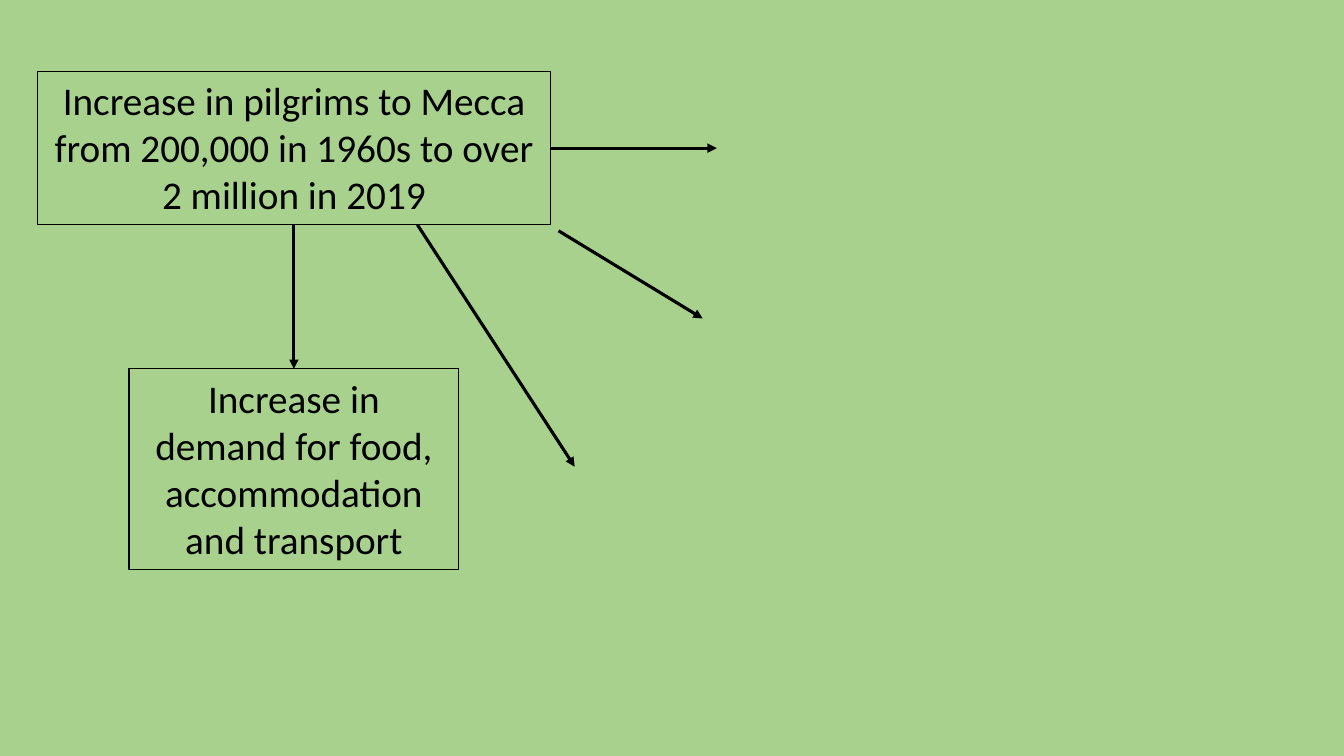
from typing import NamedTuple, Optional

from lxml import etree
from pptx import Presentation
from pptx.dml.color import RGBColor
from pptx.enum.shapes import MSO_CONNECTOR
from pptx.enum.text import MSO_ANCHOR, MSO_AUTO_SIZE, PP_ALIGN
from pptx.oxml.ns import qn
from pptx.shapes.autoshape import Shape
from pptx.slide import Slide
from pptx.util import Inches, Pt

STRAIGHT = MSO_CONNECTOR.STRAIGHT
CENTER = PP_ALIGN.CENTER
BOTTOM_SIDE, RIGHT_SIDE, TOP_SIDE = 2, 3, 0

COLOURS = {"background": "A9D18E", "ink": "000000"}
FRAME_FORMAT = {
    "word_wrap": True,
    "auto_size": MSO_AUTO_SIZE.SHAPE_TO_FIT_TEXT,
    "vertical_anchor": MSO_ANCHOR.TOP,
}
FONT_FORMAT = {"name": "Calibri", "size": Pt(28)}


class Statement(NamedTuple):
    key: str
    left: float
    top: float
    width: float
    height: float
    wording: str


class Arrow(NamedTuple):
    """Runs between two points; a joined end names a statement and its side."""
    start: tuple[float, float]
    end: tuple[float, float]
    begin_join: Optional[tuple[str, int]] = None
    end_join: Optional[tuple[str, int]] = None


STATEMENTS = [
    Statement("pilgrims", 0.37, 0.71, 5.09, 1.52,
              "Increase in pilgrims to Mecca from 200,000 in 1960s to over 2 million in 2019"),
    Statement("demand", 1.28, 3.66, 3.27, 1.99,
              "Increase in demand for food, accommodation and transport"),
]
ARROWS = [
    Arrow((5.54, 2.29), (6.97, 3.16)),
    Arrow((2.91, 2.23), (2.91, 3.66), ("pilgrims", BOTTOM_SIDE), ("demand", TOP_SIDE)),
    Arrow((5.46, 1.47), (7.11, 1.47), ("pilgrims", RIGHT_SIDE)),
    Arrow((4.14, 2.23), (5.7, 4.63)),
]


def colour(name: str) -> RGBColor:
    return RGBColor.from_string(COLOURS[name])


def apply_format(target: object, values: dict) -> None:
    for attribute, value in values.items():
        setattr(target, attribute, value)


def draw_statement(slide: Slide, statement: Statement) -> Shape:
    box = slide.shapes.add_textbox(*map(Inches, statement[1:5]))
    box.line.color.rgb = colour("ink")
    box.line.width = Pt(0.75)
    apply_format(box.text_frame, FRAME_FORMAT)
    paragraph = box.text_frame.paragraphs[0]
    paragraph.alignment = CENTER
    run = paragraph.add_run()
    run.text = statement.wording
    apply_format(run.font, FONT_FORMAT)
    run.font.color.rgb = colour("ink")
    return box


def draw_arrow(slide: Slide, arrow: Arrow, boxes: dict[str, Shape]) -> None:
    connector = slide.shapes.add_connector(
        STRAIGHT, *map(Inches, arrow.start + arrow.end))
    if arrow.begin_join:
        key, side = arrow.begin_join
        connector.begin_connect(boxes[key], side)
    if arrow.end_join:
        key, side = arrow.end_join
        connector.end_connect(boxes[key], side)
    connector.line.color.rgb = colour("ink")
    connector.line.width = Pt(2.25)
    properties = connector.element.spPr
    outline = properties.find(qn("a:ln"))
    etree.SubElement(outline, qn("a:tailEnd"), type="triangle")
    etree.SubElement(properties, qn("a:effectLst"))


def main() -> None:
    presentation = Presentation()
    presentation.slide_width = Inches(13.33)
    presentation.slide_height = Inches(7.5)
    slide = presentation.slides.add_slide(presentation.slide_layouts[6])
    slide.background.fill.solid()
    slide.background.fill.fore_color.rgb = colour("background")
    boxes = {statement.key: draw_statement(slide, statement) for statement in STATEMENTS}
    for arrow in ARROWS:
        draw_arrow(slide, arrow, boxes)
    presentation.save("out.pptx")


if __name__ == "__main__":
    main()
